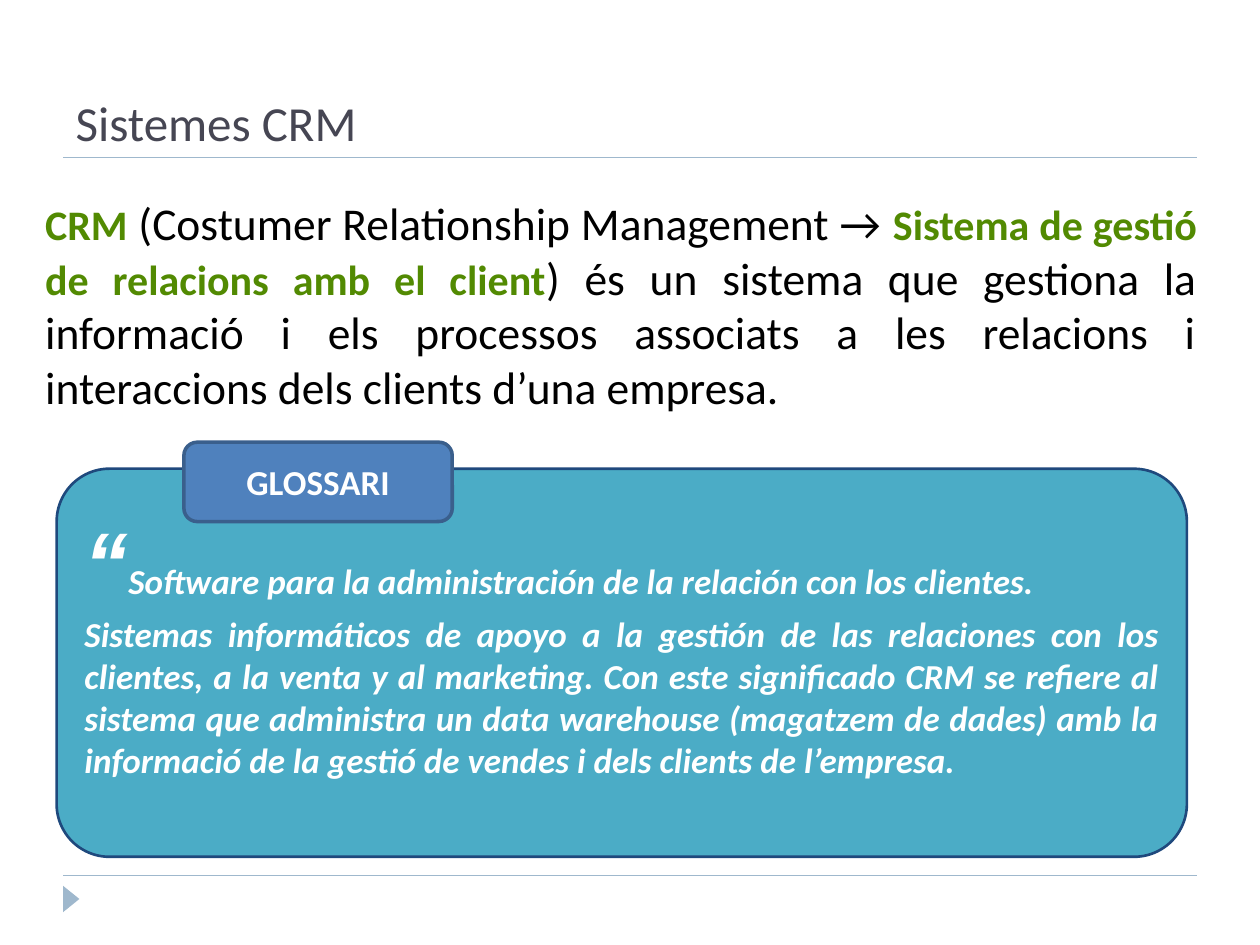
from dataclasses import dataclass

from lxml.etree import SubElement
from pptx import Presentation
from pptx.dml.color import RGBColor
from pptx.enum.shapes import MSO_CONNECTOR, MSO_SHAPE
from pptx.enum.text import MSO_ANCHOR, MSO_AUTO_SIZE, PP_ALIGN
from pptx.oxml.ns import qn
from pptx.util import Inches, Pt

GREEN, BLACK, WHITE, RULE = "528A02", "000000", "FFFFFF", "9FB8CD"


@dataclass(frozen=True)
class Box:
    left: float
    top: float
    width: float
    height: float

    def lengths(self):
        return [Inches(v) for v in (self.left, self.top, self.width, self.height)]


@dataclass(frozen=True)
class Panel:
    box: Box
    corner: float
    fill: str
    line: str
    line_width: float


@dataclass(frozen=True)
class Run:
    text: str
    size: float
    color: str
    bold: bool = False
    italic: bool = False
    font: str = "Calibri"


def rgb(color: str) -> RGBColor:
    return RGBColor.from_string(color)


def write(shape, *paragraphs: list[Run], align=PP_ALIGN.LEFT, anchor=MSO_ANCHOR.TOP,
          side: float = 0.1, top: float = 0.1, bottom: float = 0.1) -> None:
    """Fill a shape with paragraphs of runs; the insets are in inches."""
    frame = shape.text_frame
    frame.word_wrap = True
    frame.auto_size = MSO_AUTO_SIZE.NONE
    frame.vertical_anchor = anchor
    frame.margin_left = frame.margin_right = Inches(side)
    frame.margin_top, frame.margin_bottom = Inches(top), Inches(bottom)
    for index, runs in enumerate(paragraphs):
        paragraph = frame.add_paragraph() if index else frame.paragraphs[0]
        paragraph.alignment = align
        for item in runs:
            run = paragraph.add_run()
            run.text = item.text
            run.font.name = item.font
            run.font.size = Pt(item.size)
            run.font.bold, run.font.italic = item.bold, item.italic
            run.font.color.rgb = rgb(item.color)


def add_rule(slide, y: float) -> None:
    rule = slide.shapes.add_connector(
        MSO_CONNECTOR.STRAIGHT, Inches(0.5), Inches(y), Inches(9.5), Inches(y))
    rule.line.color.rgb = rgb(RULE)
    rule.line.width = Pt(0.75)
    SubElement(rule._element.spPr, qn("a:effectLst"))


def add_panel(slide, panel: Panel):
    shape = slide.shapes.add_shape(MSO_SHAPE.ROUNDED_RECTANGLE, *panel.box.lengths())
    shape.adjustments[0] = panel.corner
    shape.shadow.inherit = False
    shape.fill.solid()
    shape.fill.fore_color.rgb = rgb(panel.fill)
    shape.line.color.rgb = rgb(panel.line)
    shape.line.width = Pt(panel.line_width)
    return shape


def add_page_marker(slide) -> None:
    marker = slide.shapes.add_shape(
        MSO_SHAPE.ISOSCELES_TRIANGLE, *Box(0.46, 7.07, 0.21, 0.13).lengths())
    marker.rotation = 90
    marker.shadow.inherit = False
    marker.fill.solid()
    marker.fill.fore_color.rgb = rgb(RULE)
    marker.line.fill.background()


def main() -> None:
    presentation = Presentation()
    presentation.slide_width, presentation.slide_height = Inches(10), Inches(7.5)
    slide = presentation.slides.add_slide(presentation.slide_layouts[5])

    for y in (6.95, 1.25):
        add_rule(slide, y)
    add_page_marker(slide)

    title = slide.shapes.title
    title.left, title.top, title.width, title.height = Box(0.5, 0.22, 8.72, 1.03).lengths()
    write(title, [Run("Sistemes CRM", 28, "464653")],
          anchor=MSO_ANCHOR.BOTTOM, top=0.05, bottom=0.05)

    definition = slide.shapes.add_textbox(*Box(0.26, 1.45, 9.34, 4.74).lengths())
    write(definition, [
        Run("CRM", 24, GREEN, bold=True),
        Run(" (Costumer Relationship Management → ", 26, BLACK),
        Run("Sistema de gestió de relacions amb el client", 24, GREEN, bold=True),
        Run(") és un sistema que gestiona la informació i els processos associats a les "
            "relacions i interaccions dels clients d’una empresa.", 26, BLACK),
    ], align=PP_ALIGN.JUSTIFY)

    quote = add_panel(slide, Panel(Box(0.45, 3.72, 8.97, 3.08), 0.136, "4BACC6", "1F497D", 1.5))
    quote_style = {"color": WHITE, "bold": True, "italic": True}
    write(quote, [
        Run("“", 50, font="Arial", **quote_style),
        Run("Software para la administración de la relación con los clientes.", 20, **quote_style),
    ], [
        Run("Sistemas informáticos de apoyo a la gestión de las relaciones con los clientes, "
            "a la venta y al marketing. Con este significado CRM se refiere al sistema que "
            "administra un data warehouse (magatzem de dades) amb la informació de la gestió "
            "de vendes i dels clients de l’empresa.", 20, **quote_style),
    ], align=PP_ALIGN.JUSTIFY, anchor=MSO_ANCHOR.MIDDLE, bottom=0.4)

    citation = add_panel(slide, Panel(Box(1.46, 3.51, 2.13, 0.63), 0.167, "4F81BD", "3A5F8C", 2))
    write(citation, [Run("GLOSSARI", 20, WHITE, bold=True)], align=PP_ALIGN.CENTER,
          anchor=MSO_ANCHOR.MIDDLE, top=0.05, bottom=0.05)

    presentation.save("out.pptx")


if __name__ == "__main__":
    main()
